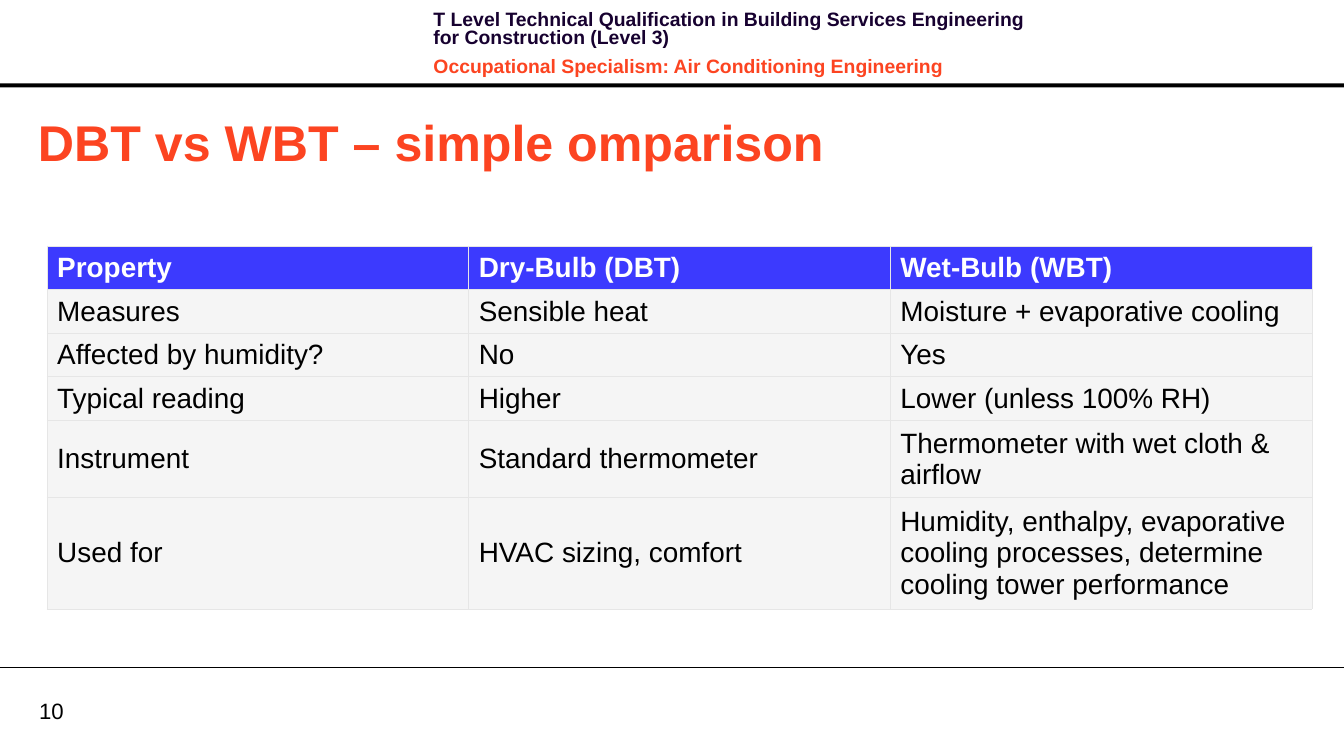
import pptx
import pptx.util
import pptx.dml.color
import pptx.enum.shapes
import pptx.enum.text
import pptx.oxml
import pptx.oxml.ns
from lxml import etree

Inches, Pt = pptx.util.Inches, pptx.util.Pt
ANCHOR = pptx.enum.text.MSO_ANCHOR

SLIDE_W, SLIDE_H = 13.39, 7.48
COLORS = {
    "black": "000000", "white": "FFFFFF", "navy": "170130", "orange": "FC4421",
    "header": "3C3AFE", "body": "F5F5F5", "border": "E6E6E6",
}
COMPARISON = [
    ("Property", "Dry‑Bulb (DBT)", "Wet‑Bulb (WBT)"),
    ("Measures", "Sensible heat", "Moisture + evaporative cooling"),
    ("Affected by humidity?", "No", "Yes"),
    ("Typical reading", "Higher", "Lower (unless 100% RH)"),
    ("Instrument", "Standard thermometer", "Thermometer with wet cloth & airflow"),
    ("Used for", "HVAC sizing, comfort",
     "Humidity, enthalpy, evaporative cooling processes, determine cooling tower performance"),
]
ROW_HEIGHTS = [0.43, 0.43, 0.43, 0.43, 0.77, 1.11]
COLUMN_W = 4.2


def rgb(name):
    return pptx.dml.color.RGBColor.from_string(COLORS[name])


def style_font(p, size, color, bold=False):
    p.font.name = "Arial"
    p.font.size = Pt(size)
    p.font.bold = bold
    p.font.color.rgb = rgb(color)


def add_text(s, box, lines, size, bold=False, inset=(0.1, 0.05), anchor=ANCHOR.TOP):
    """Add a text box with one paragraph per (text, color) pair."""
    tf = s.shapes.add_textbox(*map(Inches, box)).text_frame
    tf.word_wrap = True
    tf.vertical_anchor = anchor
    tf.margin_left = tf.margin_right = Inches(inset[0])
    tf.margin_top = tf.margin_bottom = Inches(inset[1])
    for i, (text, color) in enumerate(lines):
        p = tf.add_paragraph() if i else tf.paragraphs[0]
        p.text = text
        style_font(p, size, color, bold)
    return tf


def add_header(s):
    tf = add_text(s, (4.22, 0.07, 6.21, 0.64), [
        ("T Level Technical Qualification in Building Services Engineering "
         "for Construction (Level 3)", "navy"),
        ("Occupational Specialism: Air Conditioning Engineering", "orange"),
    ], 13.9, bold=True)
    for i, p in enumerate(tf.paragraphs):
        p.line_spacing = Pt(13)
        p.space_before = Pt(4 if i else 0)
        p.space_after = Pt(4)


def add_bar(s, top, height):
    sp = s.shapes.add_shape(pptx.enum.shapes.MSO_SHAPE.RECTANGLE, 0, Inches(top),
                            Inches(SLIDE_W), Inches(height))
    sp.shadow.inherit = False
    sp.fill.solid()
    sp.fill.fore_color.rgb = rgb("black")
    sp.line.fill.background()


def add_rule(s, y):
    line = s.shapes.add_connector(pptx.enum.shapes.MSO_CONNECTOR.STRAIGHT,
                                  0, Inches(y), Inches(SLIDE_W), Inches(y))
    line.line.color.rgb = rgb("black")
    line.line.width = Pt(0.75)
    etree.SubElement(line._element.spPr, pptx.oxml.ns.qn("a:effectLst"))


def set_borders(cell):
    tcPr = cell._tc.get_or_add_tcPr()
    for i, side in enumerate(("lnL", "lnR", "lnT", "lnB")):
        tcPr.insert(i, pptx.oxml.parse_xml(
            f'<a:{side} {pptx.oxml.ns.nsdecls("a")} w="{Pt(0.5)}"><a:solidFill>'
            f'<a:srgbClr val="{COLORS["border"]}"/></a:solidFill></a:{side}>'))


def add_table(s, left, top, rows):
    n_cols = len(rows[0])
    table = s.shapes.add_table(len(rows), n_cols, Inches(left), Inches(top),
                               Inches(COLUMN_W * n_cols), Inches(sum(ROW_HEIGHTS))).table
    for column in table.columns:
        column.width = Inches(COLUMN_W)
    for i, texts in enumerate(rows):
        table.rows[i].height = Inches(ROW_HEIGHTS[i])
        is_header = i == 0
        for j, text in enumerate(texts):
            cell = table.cell(i, j)
            cell.text = text
            cell.vertical_anchor = ANCHOR.MIDDLE
            cell.fill.solid()
            cell.fill.fore_color.rgb = rgb("header" if is_header else "body")
            set_borders(cell)
            style_font(cell.text_frame.paragraphs[0], 20,
                       "white" if is_header else "black", is_header)


def main():
    prs = pptx.Presentation()
    prs.slide_width, prs.slide_height = Inches(SLIDE_W), Inches(SLIDE_H)
    s = prs.slides.add_slide(prs.slide_layouts[6])
    add_bar(s, 0.83, 0.04)
    add_rule(s, 6.65)
    add_header(s)
    add_text(s, (0.39, 6.94, 0.64, 0.27), [("10", "black")], 15.9,
             inset=(0, 0), anchor=ANCHOR.MIDDLE)
    add_text(s, (0.28, 1.06, 11.47, 0.71),
             [("DBT vs WBT – simple omparison", "orange")], 36, bold=True)
    add_table(s, 0.47, 2.45, COMPARISON)
    prs.save("out.pptx")


if __name__ == "__main__":
    main()
